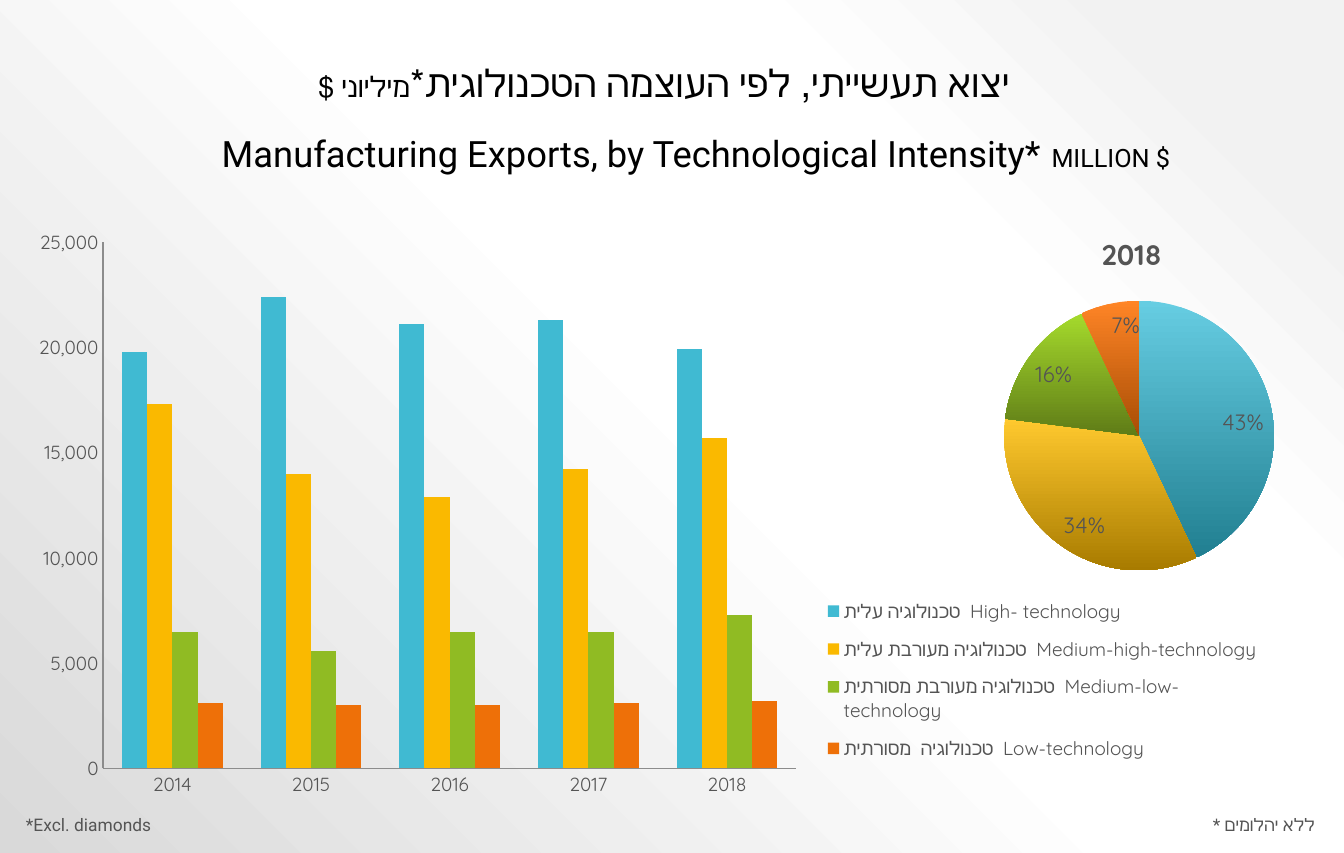
import lxml.etree
import pptx
import pptx.chart.data
import pptx.dml.color
import pptx.enum.chart
import pptx.enum.text
import pptx.oxml
import pptx.oxml.ns
import pptx.util

Cm, Pt = pptx.util.Cm, pptx.util.Pt
qn = pptx.oxml.ns.qn
ALIGN = pptx.enum.text.PP_ALIGN
GREY = "545454"
TYPES = [
    ("טכנולוגיה עלית  High- technology", "40BAD2", "66CDE2", "217F91",
     (19800, 22400, 21100, 21300, 19900), 43),
    ("טכנולוגיה מעורבת עלית  Medium-high-technology", "FAB900", "FFC92E", "A87B00",
     (17300, 14000, 12900, 14200, 15700), 34),
    ("טכנולוגיה מעורבת מסורתית  Medium-low-technology", "90BB23", "A5DA2C", "5F7C17",
     (6500, 5600, 6500, 6500, 7300), 16),
    ("טכנולוגיה  מסורתית  Low-technology", "EE7008", "FF8526", "A84D05",
     (3100, 3000, 3000, 3100, 3200), 7),
]


def color(code):
    """Turn a hex string into a colour."""
    return pptx.dml.color.RGBColor.from_string(code)


def style(font, name, size, code=GREY, bold=False):
    """Set the face, size and colour of a font."""
    font.name, font.size, font.bold = name, Pt(size), bold
    font.color.rgb = color(code)


def write(par, runs, code, align=ALIGN.LEFT):
    """Add runs of (text, size) to a paragraph."""
    par.alignment = align
    for text, size in runs:
        run = par.add_run()
        run.text = text
        style(run.font, "Roboto", size, code)


def place(shape, box):
    """Move a shape to a box in centimetres."""
    shape.left, shape.top, shape.width, shape.height = map(Cm, box)


def layout(node, index, **parts):
    """Fix the place of a chart part as shares of the chart."""
    for old in node.findall(qn("c:layout")):
        node.remove(old)
    outer = lxml.etree.Element(qn("c:layout"))
    inner = lxml.etree.SubElement(outer, qn("c:manualLayout"))
    if node.tag == qn("c:plotArea"):
        lxml.etree.SubElement(inner, qn("c:layoutTarget"), val="inner")
    for key in ("x", "y"):
        lxml.etree.SubElement(inner, qn(f"c:{key}Mode"), val="edge")
    for key, share in parts.items():
        lxml.etree.SubElement(inner, qn(f"c:{key}"), val=str(share))
    node.insert(index, outer)


def backdrop(slide):
    """Fill the slide with a round grey gradient from the top right."""
    stops = ((10, "F2F2F2"), (28, "FFFFFF"), (48, "FFFFFF"), (100, "D9D9D9"))
    slide.background.fill.gradient()
    grad = slide.background._cSld.find(".//" + qn("a:gradFill"))
    listing = "".join(f'<a:gs pos="{at * 1000}"><a:srgbClr val="{code}"/></a:gs>'
                      for at, code in stops)
    fresh = pptx.oxml.parse_xml(
        f'<a:gradFill {pptx.oxml.ns.nsdecls("a")} rotWithShape="1"><a:gsLst>{listing}</a:gsLst>'
        '<a:path path="circle"><a:fillToRect l="100000" b="100000"/></a:path></a:gradFill>')
    grad.getparent().replace(grad, fresh)


def heading(slide, box):
    """Format the Hebrew title."""
    title = slide.shapes.title
    place(title, box)
    frame = title.text_frame
    frame.word_wrap = True
    frame.auto_size = pptx.enum.text.MSO_AUTO_SIZE.NONE
    frame.vertical_anchor = pptx.enum.text.MSO_ANCHOR.BOTTOM
    frame.margin_bottom = Cm(0.97)
    par = frame.paragraphs[0]
    par.line_spacing = 0.9
    write(par, [("יצוא תעשייתי, לפי העוצמה הטכנולוגית*", 24), ("מיליוני $", 18)],
          "000000", ALIGN.CENTER)
    par._p.get_or_add_pPr().set("rtl", "1")


def label(slide, box, runs, code=GREY, align=ALIGN.LEFT, space=1.0):
    """Add a line of text."""
    frame = slide.shapes.add_textbox(*map(Cm, box)).text_frame
    frame.word_wrap = True
    frame.paragraphs[0].line_spacing = space
    write(frame.paragraphs[0], runs, code, align)


def columns(slide, box):
    """Add the yearly exports as columns with a legend."""
    data = pptx.chart.data.CategoryChartData(number_format="#,##0")
    data.categories = [str(year) for year in range(2014, 2019)]
    for name, _, _, _, values, _ in TYPES:
        data.add_series(name, values)
    kind = pptx.enum.chart.XL_CHART_TYPE.COLUMN_CLUSTERED
    chart = slide.shapes.add_chart(kind, *map(Cm, box), data).chart
    style(chart.font, "Quicksand", 18)
    chart.has_title = False
    plot = chart.plots[0]
    plot.gap_width, plot.overlap, plot.vary_by_categories = 150, 0, False
    for series, kin in zip(plot.series, TYPES):
        series.format.fill.solid()
        series.format.fill.fore_color.rgb = color(kin[1])
    for axis in (chart.category_axis, chart.value_axis):
        axis.has_major_gridlines = False
        axis.major_tick_mark = pptx.enum.chart.XL_TICK_MARK.NONE
        axis.format.line.color.rgb = color("8C8C8C")
        axis.format.line.width = Pt(0.75)
        style(axis.tick_labels.font, "Quicksand", 12)
    value = chart.value_axis
    value.minimum_scale, value.maximum_scale, value.major_unit = 0, 25000, 5000
    value.tick_labels.number_format = "#,##0"
    value.tick_labels.number_format_is_linked = False
    chart.has_legend = True
    legend = chart.legend
    legend.position = pptx.enum.chart.XL_LEGEND_POSITION.RIGHT
    legend.include_in_layout = False
    style(legend.font, "Quicksand", 12)
    layout(chart._chartSpace.find(".//" + qn("c:plotArea")), 0, x=0.07, y=0.04, w=0.55, h=0.89)
    layout(legend._element, 1, x=0.64, y=0.62, w=0.35, h=0.32)


def pie(slide, box):
    """Add the shares of 2018 as a pie."""
    data = pptx.chart.data.CategoryChartData()
    data.categories = [str(n + 1) for n in range(len(TYPES))]
    data.add_series("2018", [kin[5] for kin in TYPES])
    chart = slide.shapes.add_chart(pptx.enum.chart.XL_CHART_TYPE.PIE, *map(Cm, box), data).chart
    style(chart.font, "Quicksand", 18)
    chart.has_legend = False
    chart.has_title = True
    run = chart.chart_title.text_frame.paragraphs[0].add_run()
    run.text = "2018"
    style(run.font, "Quicksand", 18, bold=True)
    plot = chart.plots[0]
    plot.vary_by_categories = True
    for n, (_, _, light, dark, _, _) in enumerate(TYPES):
        fill = plot.series[0].points[n].format.fill
        fill.gradient()
        fill.gradient_angle = 270
        for stop, code in zip(fill.gradient_stops, (light, dark)):
            stop.color.rgb = color(code)
    plot.has_data_labels = True
    labels = plot.data_labels
    labels.show_percentage, labels.show_value = True, False
    labels.number_format, labels.number_format_is_linked = "0%", False
    labels.position = pptx.enum.chart.XL_LABEL_POSITION.INSIDE_END
    style(labels.font, "Quicksand", 14)
    layout(chart._chartSpace.find(".//" + qn("c:plotArea")), 0, x=0.2, y=0.29, w=0.67, h=0.67)
    layout(chart.chart_title._element, 1, x=0.43, y=0.11)


def main():
    """Build the exports slide."""
    deck = pptx.Presentation()
    deck.slide_width, deck.slide_height = Cm(30), Cm(19.05)
    slide = deck.slides.add_slide(deck.slide_layouts[5])
    backdrop(slide)
    heading(slide, (0.81, 0.91, 28.02, 2.41))
    columns(slide, (0.33, 4.88, 28.14, 13.21))
    pie(slide, (20.6, 4.11, 9.02, 8.99))
    label(slide, (0.33, 18.06, 4.37, 0.74), [("*Excl. diamonds", 11)])
    label(slide, (25.1, 18.06, 4.5, 0.74), [("* ללא יהלומים", 11)], align=ALIGN.RIGHT)
    label(slide, (4.7, 2.92, 22.17, 1.14),
          [("Manufacturing Exports, by Technological Intensity* ", 23), ("MILLION $", 16)],
          "000000", space=0.9)
    deck.save("out.pptx")


if __name__ == "__main__":
    main()
